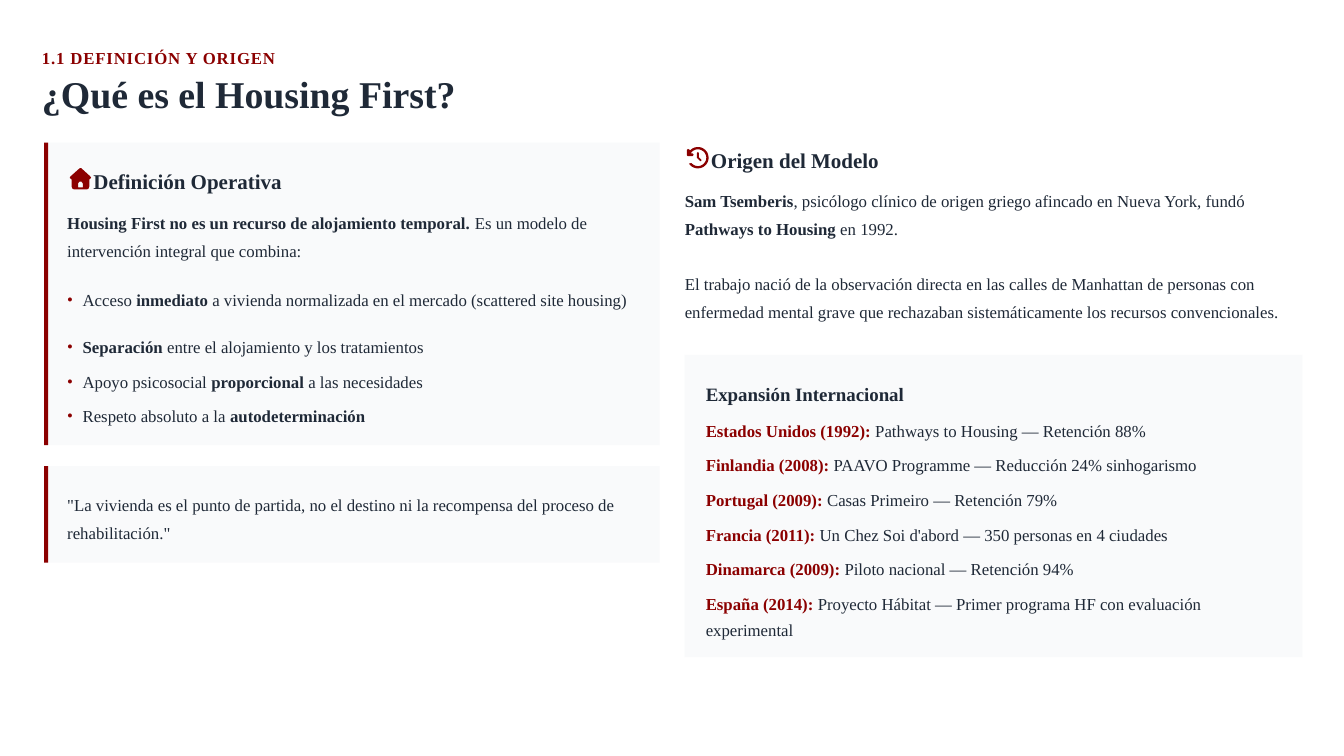
"""Build the slide that defines Housing First and traces its origin."""
from math import cos, radians, sin

from lxml.etree import SubElement
from pptx import Presentation
from pptx.dml.color import RGBColor
from pptx.enum.shapes import MSO_SHAPE as Shape
from pptx.enum.text import MSO_ANCHOR as Anchor, MSO_AUTO_SIZE as AutoSize, PP_ALIGN as Align
from pptx.oxml.ns import qn
from pptx.util import Inches, Pt

RED = RGBColor(0x8B, 0x00, 0x00)
INK = RGBColor(0x1F, 0x29, 0x37)
PANEL = RGBColor(0xF9, 0xFA, 0xFB)
FONT = "Times New Roman"
UNIT = Pt(3)
MIL = Inches(1) / 1000
LEFT, LEFT_TEXT, RIGHT, RIGHT_TEXT = 10.5, 16, 163, 168

presentation = Presentation()
presentation.slide_width, presentation.slide_height = Inches(13.33), Inches(7.5)
slide = presentation.slides.add_slide(presentation.slide_layouts[5])


def add_text(text, column, row, columns, rows, shape=None, size=12, color=INK,
             bold_color=INK, line=1.3, gaps=(), tracking=0, bullets=False):
    """Place lines of text on the grid; parts between asterisks are bold."""
    box = [round(length * UNIT) for length in (column, row, columns, rows)]
    shape = shape or slide.shapes.add_textbox(*box)
    shape.left, shape.top, shape.width, shape.height = box
    frame = shape.text_frame
    frame.word_wrap, frame.auto_size = True, AutoSize.NONE
    frame.vertical_anchor = Anchor.MIDDLE
    frame.margin_left = frame.margin_top = frame.margin_right = frame.margin_bottom = 0
    for index, content in enumerate(text.split("\n")):
        paragraph = frame.add_paragraph() if index else frame.paragraphs[0]
        if bullets:
            properties = paragraph._p.get_or_add_pPr()
            properties.set("marL", str(Pt(11)))
            properties.set("indent", str(-Pt(11)))
            bullet_color = SubElement(properties, qn("a:buClr"))
            SubElement(bullet_color, qn("a:srgbClr")).set("val", str(RED))
            SubElement(properties, qn("a:buFont")).set("typeface", FONT)
            SubElement(properties, qn("a:buChar")).set("char", "•")
        paragraph.alignment = Align.LEFT
        paragraph.line_spacing = line
        if index:
            paragraph.space_before = Pt(gaps[index - 1])
        for part, words in enumerate(content.split("*")):
            if not words:
                continue
            run = paragraph.add_run()
            run.text = words
            run.font.name, run.font.size = FONT, Pt(size)
            run.font.bold = part % 2 == 1
            run.font.color.rgb = bold_color if run.font.bold else color
            if tracking:
                run._r.get_or_add_rPr().set("spc", str(tracking))


def arc(radius, start, end, step):
    """Return points of the clock's rim, in thousandths of an inch."""
    return [(6922 + radius * cos(radians(angle)), 1565 + radius * sin(radians(angle)))
            for angle in range(start, end, step)]


add_text("*1.1 DEFINICIÓN Y ORIGEN*", 10, 10, 302, 6, bold_color=RED, tracking=60)
add_text("*¿Qué es el Housing First?*", 10, 18, 304, 10, shape=slide.shapes.title,
         size=27, line=0.9)

panels = [
    (LEFT, 34, 146.5, 72, PANEL), (LEFT, 34, 1, 72, RED),
    (LEFT, 111, 146.5, 23, PANEL), (LEFT, 111, 1, 23, RED),
    (RIGHT, 84.5, 147, 72, PANEL),
]
for *box, color in panels:
    panel = slide.shapes.add_shape(Shape.RECTANGLE, *(round(length * UNIT) for length in box))
    panel.shadow.inherit = False
    panel.fill.solid()
    panel.fill.fore_color.rgb = color
    panel.line.fill.background()

house = [(805, 1667), (790, 1670), (700, 1750), (692, 1765), (710, 1780), (710, 1850),
         (720, 1873), (740, 1880), (858, 1880), (878, 1873), (886, 1850), (886, 1780),
         (904, 1765), (896, 1750)]
door = [(774, 1860), (774, 1820), (787, 1803), (809, 1803), (822, 1820), (822, 1860)]
clock = arc(83, -148, 146, 6) + arc(106, 146, -142, -6) + [
    (6838, 1486), (6824, 1478), (6812, 1488), (6812, 1540), (6822, 1549),
    (6870, 1549), (6880, 1536), (6870, 1522)]
hands = [(6922, 1508), (6912, 1518), (6912, 1565), (6945, 1600), (6957, 1597),
         (6957, 1587), (6932, 1560), (6932, 1518)]
for outline, detail in ((house, door), (clock, hands)):
    builder = slide.shapes.build_freeform(*outline[0], scale=MIL)
    builder.add_line_segments(outline[1:], close=True)
    builder.move_to(*detail[0])
    builder.add_line_segments(detail[1:], close=True)
    icon = builder.convert_to_shape()
    icon.shadow.inherit = False
    icon.fill.solid()
    icon.fill.fore_color.rgb = RED
    icon.line.fill.background()

add_text("*Definición Operativa*", 22.25, 39, 132, 7, size=15, line=1.2)
add_text("*Housing First no es un recurso de alojamiento temporal.* Es un modelo de "
         "intervención integral que combina:", LEFT_TEXT, 49, 138, 13, line=1.4)
add_text("Acceso *inmediato* a vivienda normalizada en el mercado (scattered site housing)\n"
         "*Separación* entre el alojamiento y los tratamientos\n"
         "Apoyo psicosocial *proporcional* a las necesidades\n"
         "Respeto absoluto a la *autodeterminación*",
         LEFT_TEXT, 68, 138, 33, gaps=(15, 6, 6), bullets=True)
add_text('"La vivienda es el punto de partida, no el destino ni la recompensa del proceso '
         'de rehabilitación."', LEFT_TEXT, 116, 138, 13, line=1.4)

add_text("*Origen del Modelo*", 169.25, 34, 143, 7, size=15, line=1.2)
add_text("*Sam Tsemberis*, psicólogo clínico de origen griego afincado en Nueva York, fundó "
         "*Pathways to Housing* en 1992.\n"
         "El trabajo nació de la observación directa en las calles de Manhattan de personas "
         "con enfermedad mental grave que rechazaban sistemáticamente los recursos "
         "convencionales.", RIGHT, 44, 149, 32, line=1.4, gaps=(19,))
add_text("*Expansión Internacional*", RIGHT_TEXT, 89.5, 139, 7, size=13.5)
add_text("*Estados Unidos (1992):* Pathways to Housing — Retención 88%\n"
         "*Finlandia (2008):* PAAVO Programme — Reducción 24% sinhogarismo\n"
         "*Portugal (2009):* Casas Primeiro — Retención 79%\n"
         "*Francia (2011):* Un Chez Soi d'abord — 350 personas en 4 ciudades\n"
         "*Dinamarca (2009):* Piloto nacional — Retención 94%\n"
         "*España (2014):* Proyecto Hábitat — Primer programa HF con evaluación experimental",
         RIGHT_TEXT, 99.5, 139, 52, bold_color=RED, gaps=(6,) * 5)

presentation.save("out.pptx")
